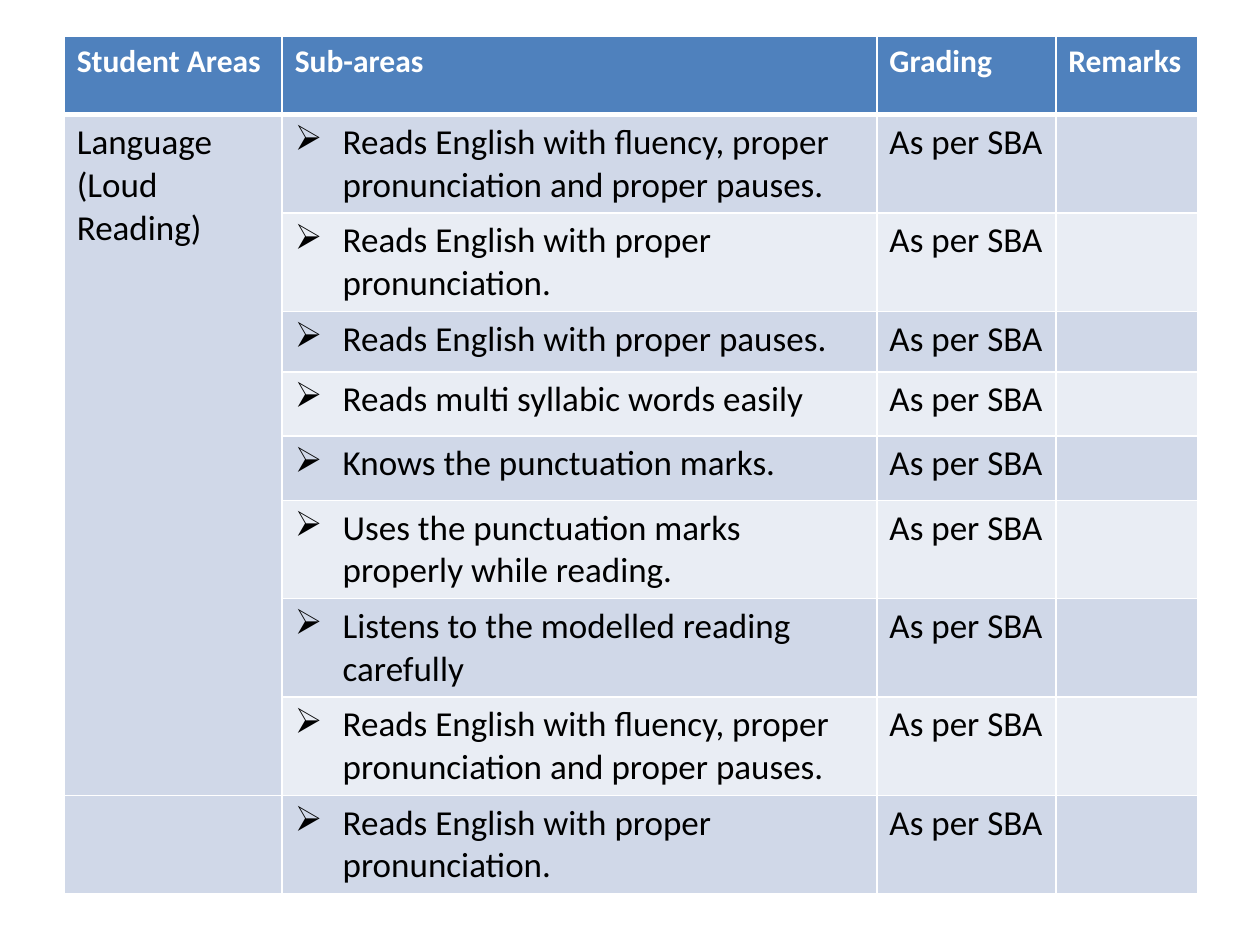
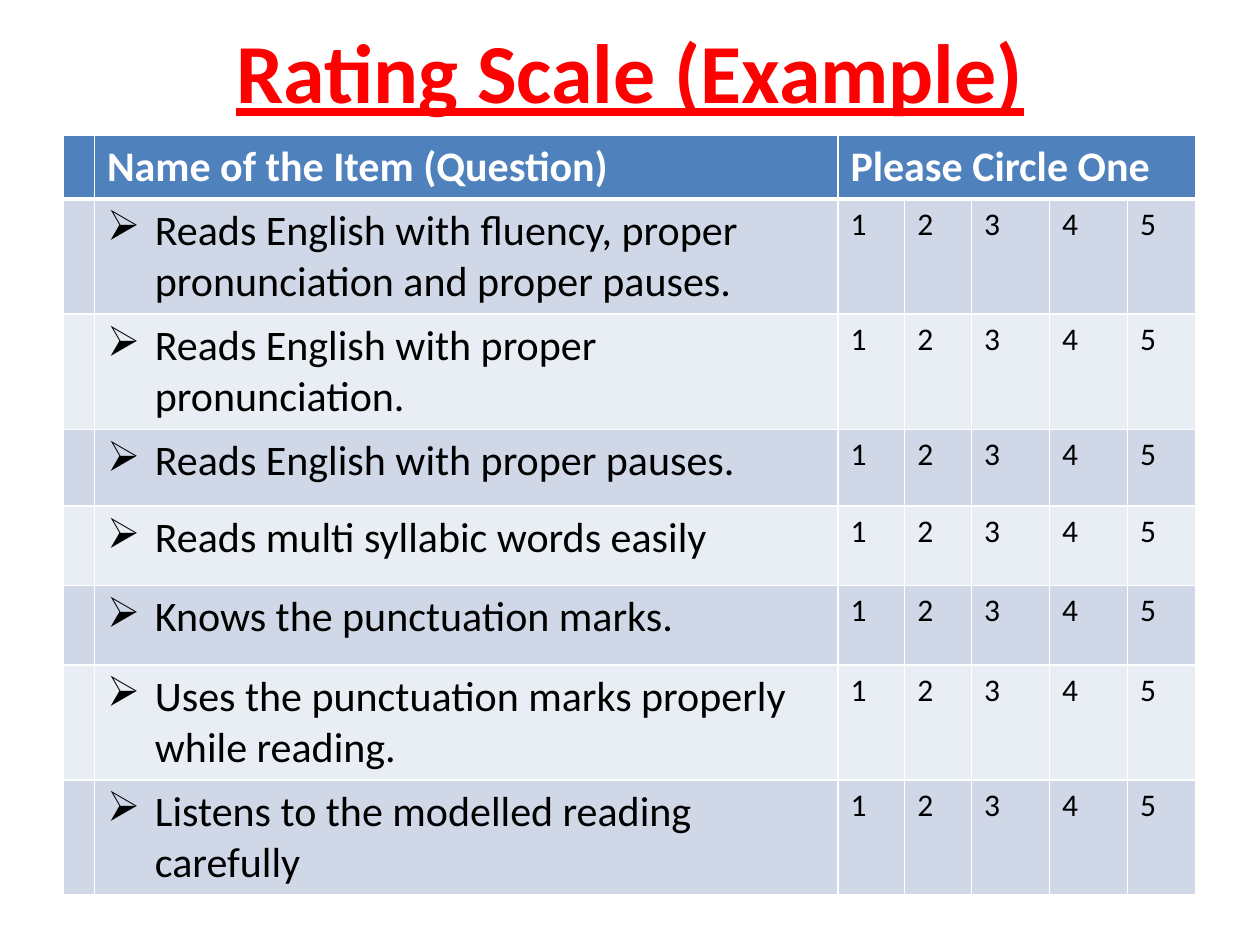
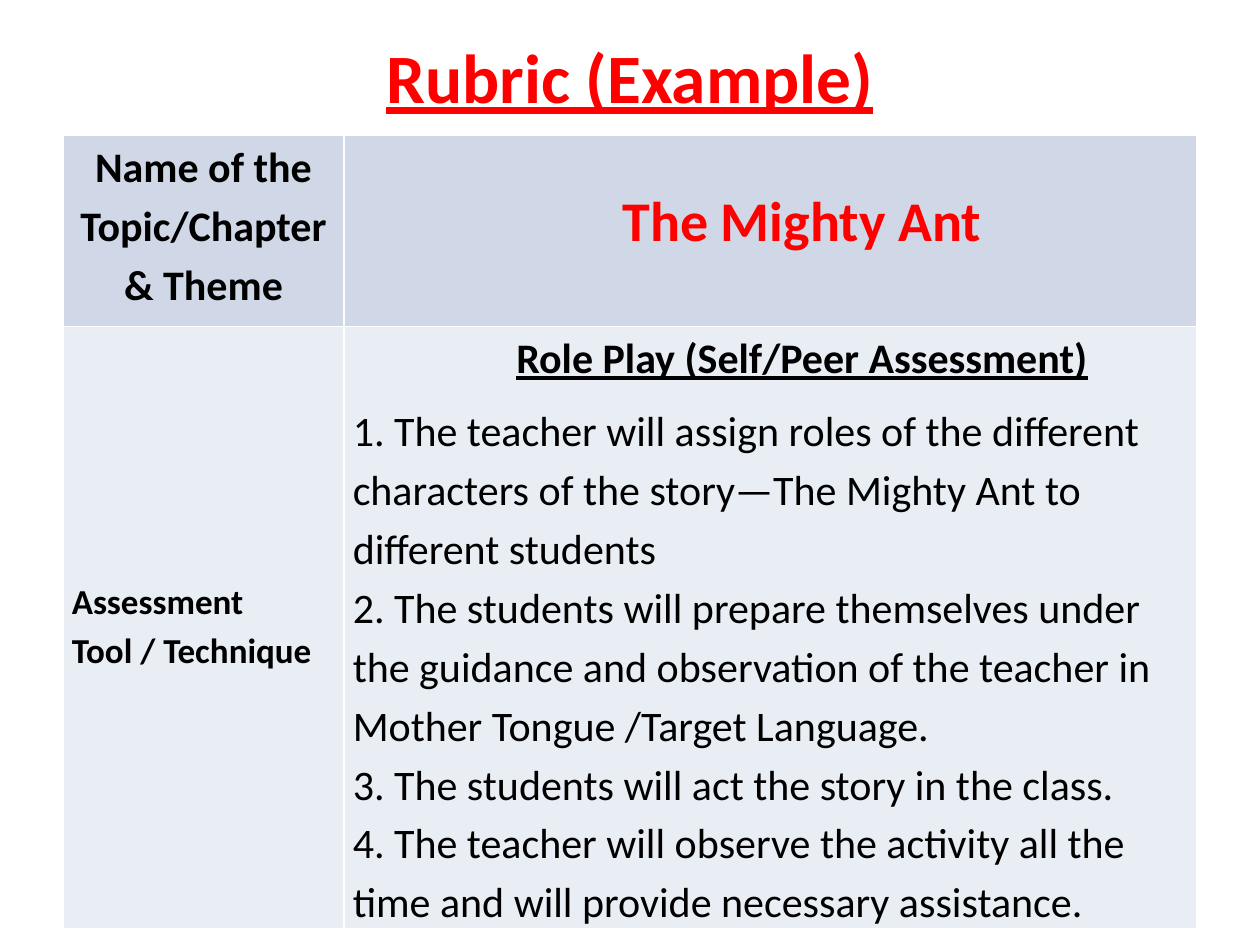
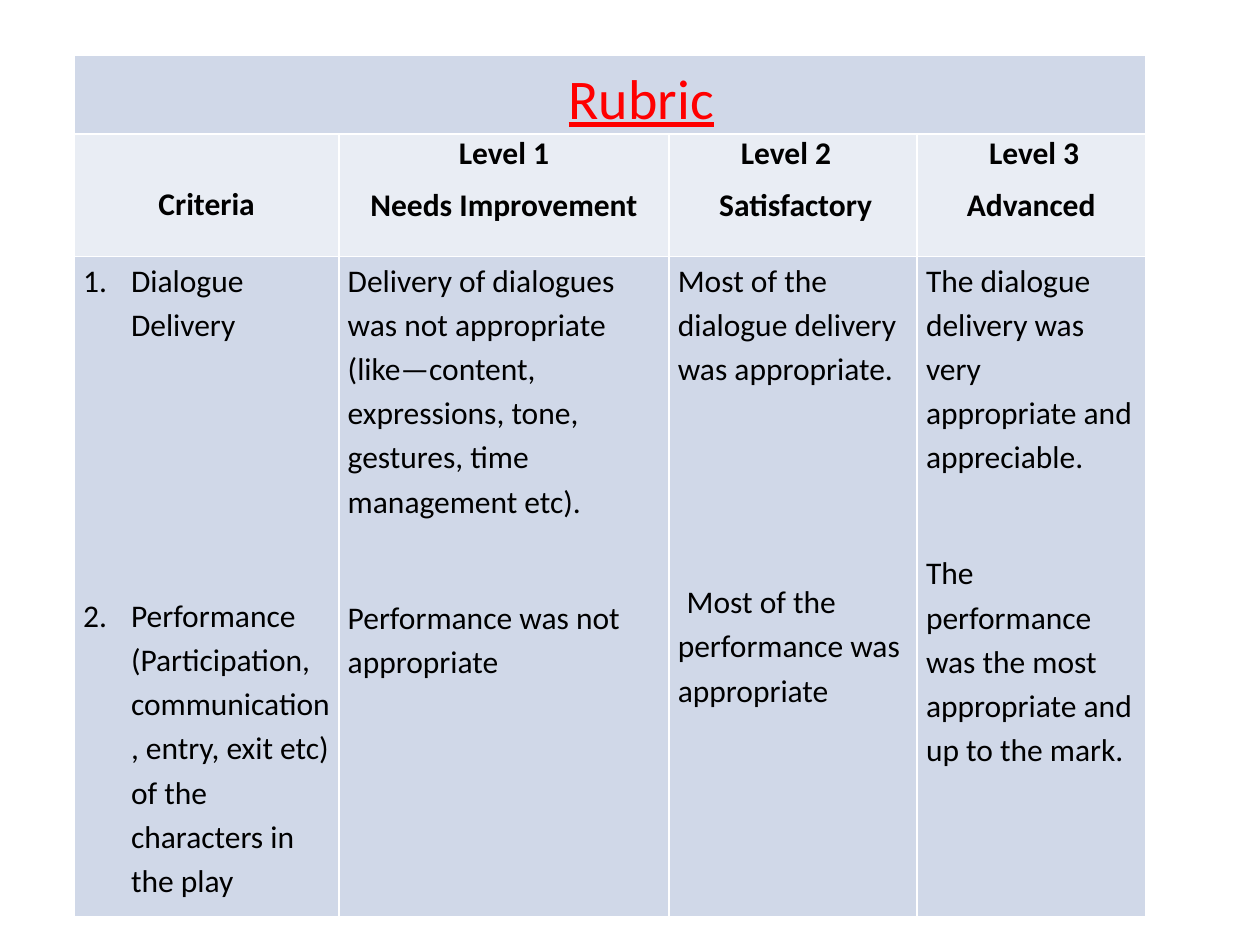
from dataclasses import dataclass
from typing import Optional

from lxml.etree import SubElement
from pptx import Presentation
from pptx.dml.color import RGBColor
from pptx.enum.text import MSO_ANCHOR, MSO_AUTO_SIZE, PP_ALIGN
from pptx.oxml.ns import qn
from pptx.util import Inches, Pt


@dataclass(frozen=True)
class Theme:
    font: str = "Calibri"
    header: str = "4F81BD"
    band_dark: str = "D0D8E8"
    band_light: str = "E9EDF4"
    white: str = "FFFFFF"
    black: str = "000000"
    accent: str = "FF0000"
    small: float = 18
    medium: float = 20
    large: float = 24
    heading: float = 32
    rubric_title: float = 39.6
    scale_title: float = 48
    grid_line: float = 1
    header_line: float = 3


THEME = Theme()
TITLE_ONLY, BLANK = 5, 6
ARROW, NUMBER = "➢", "1."
RUBRIC_LINES = 1.15
RUBRIC_AFTER = 8


@dataclass(frozen=True)
class Para:
    text: str
    size: float = THEME.small
    color: str = THEME.black
    bold: bool = False
    underline: bool = False
    align: PP_ALIGN = PP_ALIGN.LEFT
    left: float = 0
    first: float = 0
    lines: Optional[float] = None
    after: float = 0
    bullet: str = ""


@dataclass(frozen=True)
class Cell:
    paras: tuple[Para, ...] = ()
    span: tuple[int, int] = (1, 1)
    top: float = 0.05
    bottom: float = 0.05
    side: float = 0.1


@dataclass(frozen=True)
class Grid:
    left: float
    top: float
    columns: tuple[float, ...]
    heights: tuple[float, ...]
    rows: list[list[Optional[Cell]]]
    has_header: bool = False


def add_run(paragraph, text: str, style: Para) -> None:
    run = paragraph.add_run()
    run.text = text
    run.font.name = THEME.font
    run.font.size = Pt(style.size)
    run.font.bold = style.bold
    run.font.underline = style.underline
    run.font.color.rgb = RGBColor.from_string(style.color)


def write_paragraph(paragraph, content: Para) -> None:
    """Format one paragraph; a newline in the text becomes a line break."""
    paragraph.alignment = content.align
    paragraph.space_after = Pt(content.after)
    if content.lines:
        paragraph.line_spacing = content.lines
    properties = paragraph._p.get_or_add_pPr()
    properties.set("marL", str(Inches(content.left)))
    properties.set("indent", str(Inches(content.first)))
    if content.bullet == NUMBER:
        SubElement(properties, qn("a:buAutoNum"), type="arabicPeriod")
    elif content.bullet:
        SubElement(properties, qn("a:buChar"), char=content.bullet)
    for index, line in enumerate(content.text.split("\n")):
        if index:
            paragraph.add_line_break()
        add_run(paragraph, line, content)


def add_borders(table_cell, top: float, bottom: float) -> None:
    properties = table_cell._tc.get_or_add_tcPr()
    weights = {"lnL": THEME.grid_line, "lnR": THEME.grid_line, "lnT": top, "lnB": bottom}
    for side, weight in weights.items():
        line = SubElement(properties, qn(f"a:{side}"), w=str(Pt(weight)))
        SubElement(SubElement(line, qn("a:solidFill")), qn("a:srgbClr"), val=THEME.white)


def fill_for(row: int, has_header: bool) -> str:
    if has_header and row == 0:
        return THEME.header
    return THEME.band_light if (row - has_header) % 2 else THEME.band_dark


def write_cell(table_cell, content: Cell) -> None:
    table_cell.margin_left = table_cell.margin_right = Inches(content.side)
    table_cell.margin_top = Inches(content.top)
    table_cell.margin_bottom = Inches(content.bottom)
    frame = table_cell.text_frame
    for index, para in enumerate(content.paras):
        write_paragraph(frame.add_paragraph() if index else frame.paragraphs[0], para)


def add_grid(slide, grid: Grid) -> None:
    table = slide.shapes.add_table(
        len(grid.heights), len(grid.columns), Inches(grid.left), Inches(grid.top),
        Inches(sum(grid.columns)), Inches(sum(grid.heights))).table
    table.first_row = grid.has_header
    for column, width in zip(table.columns, grid.columns):
        column.width = Inches(width)
    for row, height in zip(table.rows, grid.heights):
        row.height = Inches(height)
    for r, row_cells in enumerate(grid.rows):
        top = THEME.header_line if grid.has_header and r == 1 else THEME.grid_line
        bottom = THEME.header_line if grid.has_header and r == 0 else THEME.grid_line
        for c, content in enumerate(row_cells):
            table_cell = table.cell(r, c)
            add_borders(table_cell, top, bottom)
            table_cell.fill.solid()
            table_cell.fill.fore_color.rgb = RGBColor.from_string(fill_for(r, grid.has_header))
            if content is None:
                continue
            if content.span != (1, 1):
                down, across = content.span
                table_cell.merge(table.cell(r + down - 1, c + across - 1))
            write_cell(table_cell, content)


def set_title(slide, text: str, size: float, top: float, height: float) -> None:
    title = slide.shapes.title
    title.left, title.top = Inches(0.5), Inches(top)
    title.width, title.height = Inches(9), Inches(height)
    frame = title.text_frame
    frame.auto_size = MSO_AUTO_SIZE.NONE
    frame.word_wrap = True
    frame.vertical_anchor = MSO_ANCHOR.MIDDLE
    write_paragraph(frame.paragraphs[0], Para(
        text, size, THEME.accent, bold=True, underline=True, align=PP_ALIGN.CENTER))


def header_cell(text: str, size: float, across: int = 1) -> Cell:
    return Cell((Para(text, size, THEME.white, bold=True),), span=(1, across))


def plain_cell(text: str, size: float) -> Cell:
    return Cell((Para(text, size),))


def skill_cell(text: str, size: float) -> Cell:
    return Cell((Para(text, size, left=0.38, first=-0.38, bullet=ARROW),))


def rubric_para(text: str, size: float = THEME.small, **style) -> Para:
    return Para(text, size, **{"lines": RUBRIC_LINES, "after": RUBRIC_AFTER, **style})


def rubric_cell(*paras: Para, top: float = 0, across: int = 1) -> Cell:
    return Cell(paras, span=(1, across), top=top, bottom=0, side=0.07)


def level_para(text: str, **style) -> Para:
    return Para(text, bold=True, after=RUBRIC_AFTER, **{"align": PP_ALIGN.CENTER, **style})


SKILLS = [
    "Reads English with fluency, proper pronunciation and proper pauses.",
    "Reads English with proper pronunciation.",
    "Reads English with proper pauses.",
    "Reads multi syllabic words easily",
    "Knows the punctuation marks.",
    "Uses the punctuation marks properly while reading.",
    "Listens to the modelled reading carefully",
]


def build_checklist(deck) -> None:
    checklist_skills = SKILLS + SKILLS[:2]
    area = Cell((Para("Language", THEME.medium), Para("(Loud Reading)", THEME.medium)),
                span=(8, 1))
    areas = [area] + [None] * 7 + [Cell()]
    headings = ("Student Areas", "Sub-areas", "Grading", "Remarks")
    rows = [[header_cell(heading, THEME.small) for heading in headings]]
    rows += [[student_area, skill_cell(skill, THEME.medium),
              plain_cell("As per SBA", THEME.medium), Cell()]
             for student_area, skill in zip(areas, checklist_skills)]
    slide = deck.slides.add_slide(deck.slide_layouts[BLANK])
    add_grid(slide, Grid(
        0.51, 0.29, (1.73, 4.72, 1.42, 1.13),
        (0.62, 0.62, 0.74, 0.48, 0.51, 0.51, 0.77, 0.62, 0.62, 0.62), rows, has_header=True))


def build_rating_scale(deck) -> None:
    slide = deck.slides.add_slide(deck.slide_layouts[TITLE_ONLY])
    set_title(slide, "Rating Scale (Example)", THEME.scale_title, 0.21, 0.69)
    ratings = [plain_cell(str(rating), THEME.small) for rating in range(1, 6)]
    rows = [[Cell(), header_cell("Name of the Item (Question)", THEME.large),
             header_cell("Please Circle One", THEME.large, across=5)] + [None] * 4]
    rows += [[Cell(), skill_cell(skill, THEME.large), *ratings] for skill in SKILLS]
    add_grid(slide, Grid(
        0.5, 1.07, (0.25, 5.9, 0.53, 0.53, 0.62, 0.62, 0.54),
        (0.51, 0.85, 0.51, 0.61, 0.63, 0.63, 0.87, 0.51), rows, has_header=True))


def build_role_play(deck) -> None:
    slide = deck.slides.add_slide(deck.slide_layouts[TITLE_ONLY])
    set_title(slide, "Rubric (Example)", THEME.rubric_title, 0.3, 0.61)
    centred = {"bold": True, "align": PP_ALIGN.CENTER}
    steps = (
        "1. The teacher will assign roles of the different characters of the story"
        "—The Mighty Ant to different students",
        "2. The students will prepare themselves under the guidance and observation "
        "of the teacher in Mother Tongue /Target Language.",
        "3. The students will act the story in the class.",
        "4. The teacher will observe the activity all the time and will provide "
        "necessary assistance.",
    )
    topic_label = rubric_cell(
        rubric_para("Name of the Topic/Chapter & Theme", THEME.large, **centred))
    topic = rubric_cell(
        rubric_para("The Mighty Ant", THEME.heading, color=THEME.accent, first=0.5, **centred),
        top=0.34)
    technique_label = rubric_cell(
        rubric_para("Assessment\nTool / Technique", THEME.medium, bold=True), top=1.97)
    technique = rubric_cell(
        rubric_para("Role Play (Self/Peer Assessment)", THEME.large, underline=True,
                    first=0.5, **centred),
        *(rubric_para(step, THEME.large, after=0) for step in steps[:-1]),
        rubric_para(steps[-1], THEME.large))
    add_grid(slide, Grid(0.5, 1.07, (2.23, 6.77), (1.52, 4.77),
                         [[topic_label, topic], [technique_label, technique]]))


def build_rubric(deck) -> None:
    numbered = {"left": 0.38, "first": -0.38, "bullet": NUMBER}
    heading = rubric_cell(
        rubric_para("Rubric", THEME.heading, color=THEME.accent, underline=True,
                    align=PP_ALIGN.CENTER, first=0.5), across=4)
    shifted = {"align": PP_ALIGN.LEFT, "first": 0.5}
    levels = [
        rubric_cell(level_para("Criteria"), top=0.41),
        rubric_cell(level_para("Level 1"), level_para("Needs Improvement")),
        rubric_cell(level_para("Level 2", **shifted), level_para("Satisfactory", first=0.04)),
        rubric_cell(level_para("Level 3", **shifted), level_para("Advanced")),
    ]
    descriptions = [
        rubric_cell(
            rubric_para("Dialogue Delivery", after=141, **numbered),
            rubric_para("Performance (Participation, communication, entry, exit etc) "
                        "of the characters in the play", **numbered)),
        rubric_cell(
            rubric_para("Delivery of dialogues was not appropriate (like—content, "
                        "expressions, tone, gestures, time management etc).", after=41),
            rubric_para("Performance was not appropriate")),
        rubric_cell(
            rubric_para("Most of the dialogue delivery was appropriate.", after=108),
            rubric_para("Most of the performance was appropriate", first=0.07)),
        rubric_cell(
            rubric_para("The dialogue delivery was very appropriate and appreciable.", after=41),
            rubric_para("The performance was the most appropriate and up to the mark.")),
    ]
    slide = deck.slides.add_slide(deck.slide_layouts[BLANK])
    add_grid(slide, Grid(0.59, 0.44, (2.1, 2.62, 1.97, 1.81), (0.56, 0.97, 5.24),
                         [[heading, None, None, None], levels, descriptions]))


def main() -> None:
    deck = Presentation()
    deck.slide_width, deck.slide_height = Inches(10), Inches(7.5)
    for build in (build_checklist, build_rating_scale, build_role_play, build_rubric):
        build(deck)
    deck.save("out.pptx")


if __name__ == "__main__":
    main()
